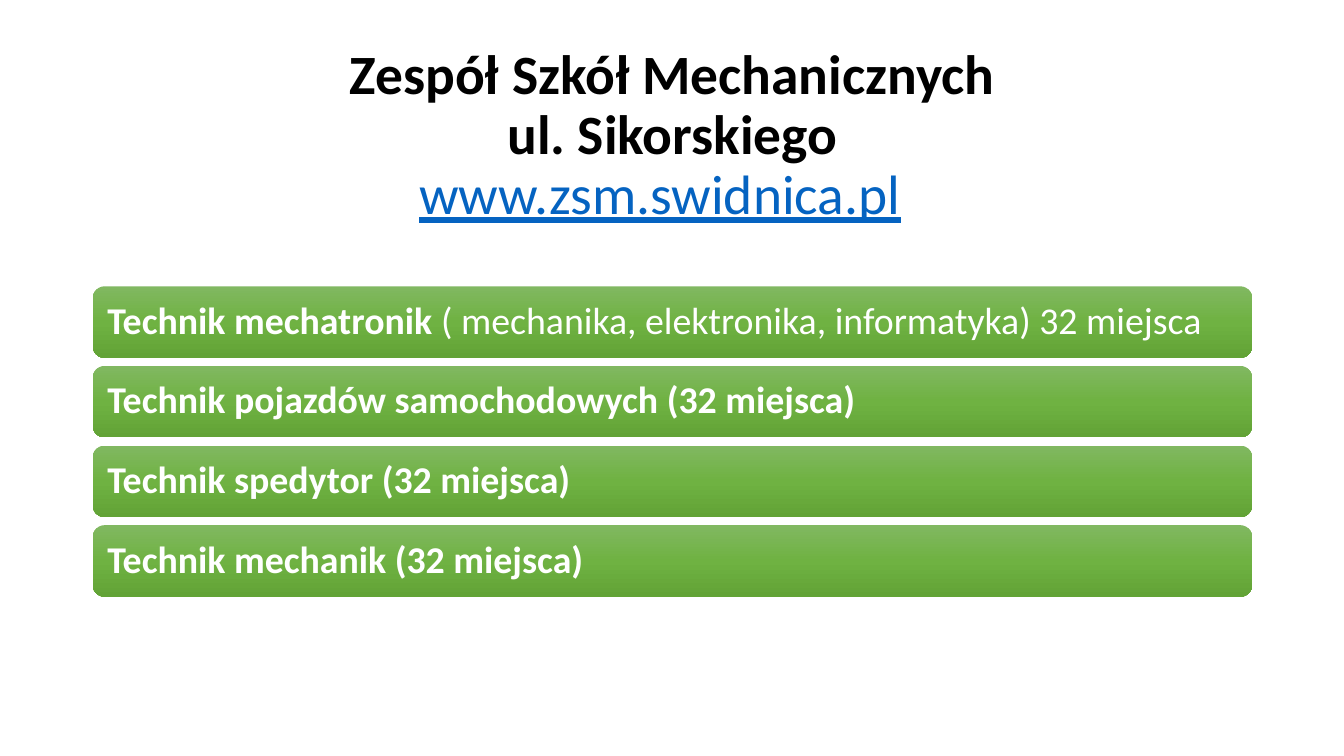
import copy
from dataclasses import dataclass

import pptx
import pptx.dml.color
import pptx.enum.shapes
import pptx.enum.text
import pptx.oxml.ns
import pptx.util

Inches = pptx.util.Inches
FONT = "Calibri"
LEFT, WIDTH = 0.92, 11.5
BAR_TOP, BAR_HEIGHT, BAR_PITCH = 2.84, 0.71, 0.79
BAR_INSET = 0.11
BAR_GRADIENT = ((0, "81B861"), (0.5, "6FB242"), (1, "62A336"))


@dataclass(frozen=True)
class HeadingLine:
    text: str
    color: str = "000000"
    link: bool = False
    right_indent: float = 0


@dataclass(frozen=True)
class Course:
    name: str
    details: str = ""


HEADING = (
    HeadingLine("Zespół Szkół Mechanicznych"),
    HeadingLine("ul. Sikorskiego"),
    HeadingLine("www.zsm.swidnica.pl", "0563C1", link=True, right_indent=0.25),
)
COURSES = (
    Course("Technik mechatronik", " ( mechanika, elektronika, informatyka) 32 miejsca"),
    Course("Technik pojazdów samochodowych (32 miejsca)"),
    Course("Technik spedytor (32 miejsca)"),
    Course("Technik mechanik (32 miejsca)"),
)


def rgb(color: str) -> pptx.dml.color.RGBColor:
    return pptx.dml.color.RGBColor.from_string(color)


def format_run(run, size: float, color: str, bold: bool) -> None:
    run.font.name = FONT
    run.font.size = pptx.util.Pt(size)
    run.font.bold = bold
    run.font.color.rgb = rgb(color)


def fill_bar(bar) -> None:
    """Apply the three-stop gradient, running from top to bottom."""
    bar.fill.gradient()
    bar.fill.gradient_angle = 270
    stop_list = bar.fill.gradient_stops[0]._gs.getparent()
    stop_list.append(copy.deepcopy(stop_list[-1]))
    for stop, (position, color) in zip(bar.fill.gradient_stops, BAR_GRADIENT):
        stop.position = position
        stop.color.rgb = rgb(color)


def draw_heading(slide) -> None:
    heading = slide.shapes.add_textbox(
        Inches(LEFT), Inches(0.4), Inches(WIDTH), Inches(1.91)
    ).text_frame
    heading.word_wrap = True
    heading.vertical_anchor = pptx.enum.text.MSO_ANCHOR.MIDDLE
    heading.text = "\n".join(line.text for line in HEADING)
    for paragraph, line in zip(heading.paragraphs, HEADING):
        paragraph.alignment = pptx.enum.text.PP_ALIGN.CENTER
        paragraph.line_spacing = 0.9
        run = paragraph.runs[0]
        format_run(run, 39.6, line.color, bold=not line.link)
        run.font.underline = line.link
        if line.right_indent:
            properties = paragraph._p.get_or_add_pPr()
            properties.set("marR", str(Inches(line.right_indent)))


def draw_course(slide, course: Course, top: float) -> None:
    bar = slide.shapes.add_shape(
        pptx.enum.shapes.MSO_SHAPE.ROUNDED_RECTANGLE,
        Inches(LEFT), Inches(top), Inches(WIDTH), Inches(BAR_HEIGHT),
    )
    bar.shadow.inherit = False
    bar.line.fill.background()
    fill_bar(bar)

    label = bar.text_frame
    label.word_wrap = True
    label.vertical_anchor = pptx.enum.text.MSO_ANCHOR.MIDDLE
    label.margin_left = label.margin_right = Inches(BAR_INSET)
    label.margin_top = label.margin_bottom = Inches(BAR_INSET)
    label.text = course.name
    paragraph = label.paragraphs[0]
    paragraph.alignment = pptx.enum.text.PP_ALIGN.LEFT
    paragraph.line_spacing = 0.9
    format_run(paragraph.runs[0], 27, "FFFFFF", bold=True)
    if course.details:
        details = paragraph.add_run()
        details.text = course.details
        format_run(details, 27, "FFFFFF", bold=False)


def main() -> None:
    presentation = pptx.Presentation()
    presentation.slide_width = Inches(13.33)
    presentation.slide_height = Inches(7.5)
    slide = presentation.slides.add_slide(presentation.slide_layouts[6])
    draw_heading(slide)
    for row, course in enumerate(COURSES):
        draw_course(slide, course, BAR_TOP + row * BAR_PITCH)
    presentation.save("out.pptx")


if __name__ == "__main__":
    main()
